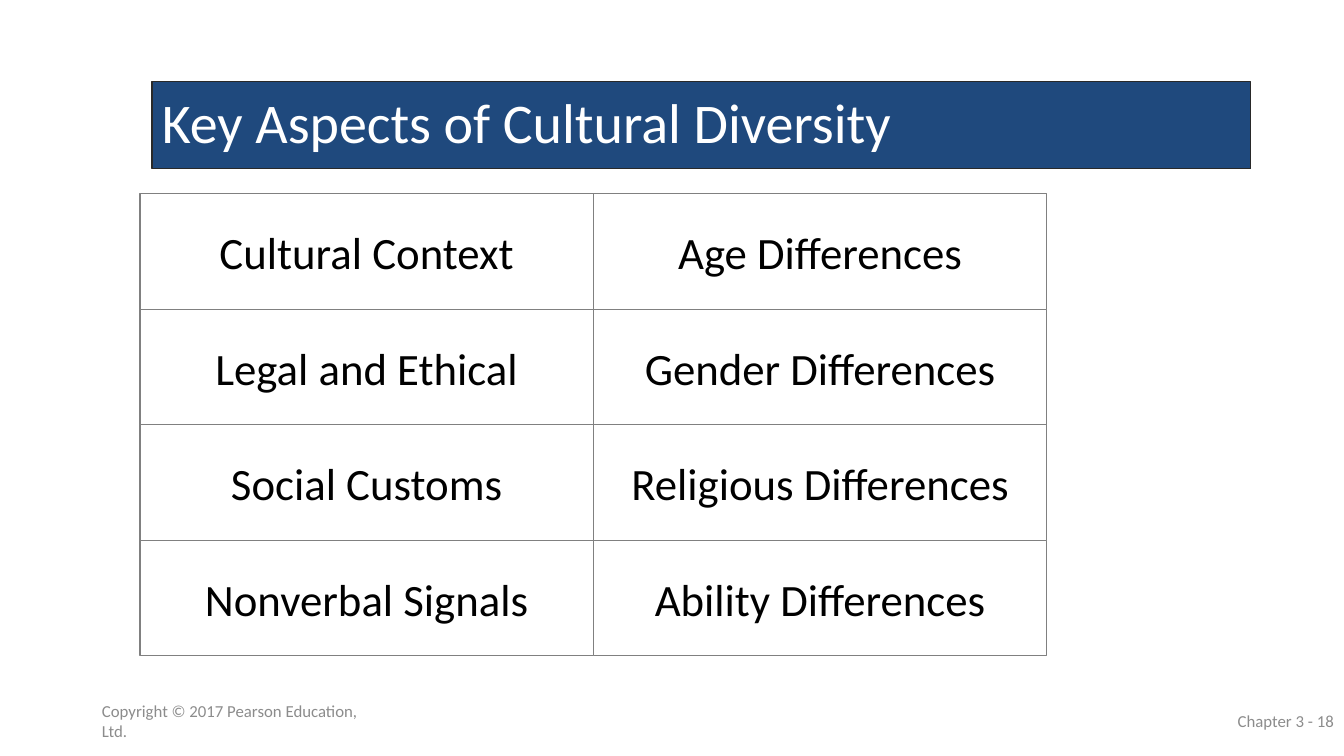
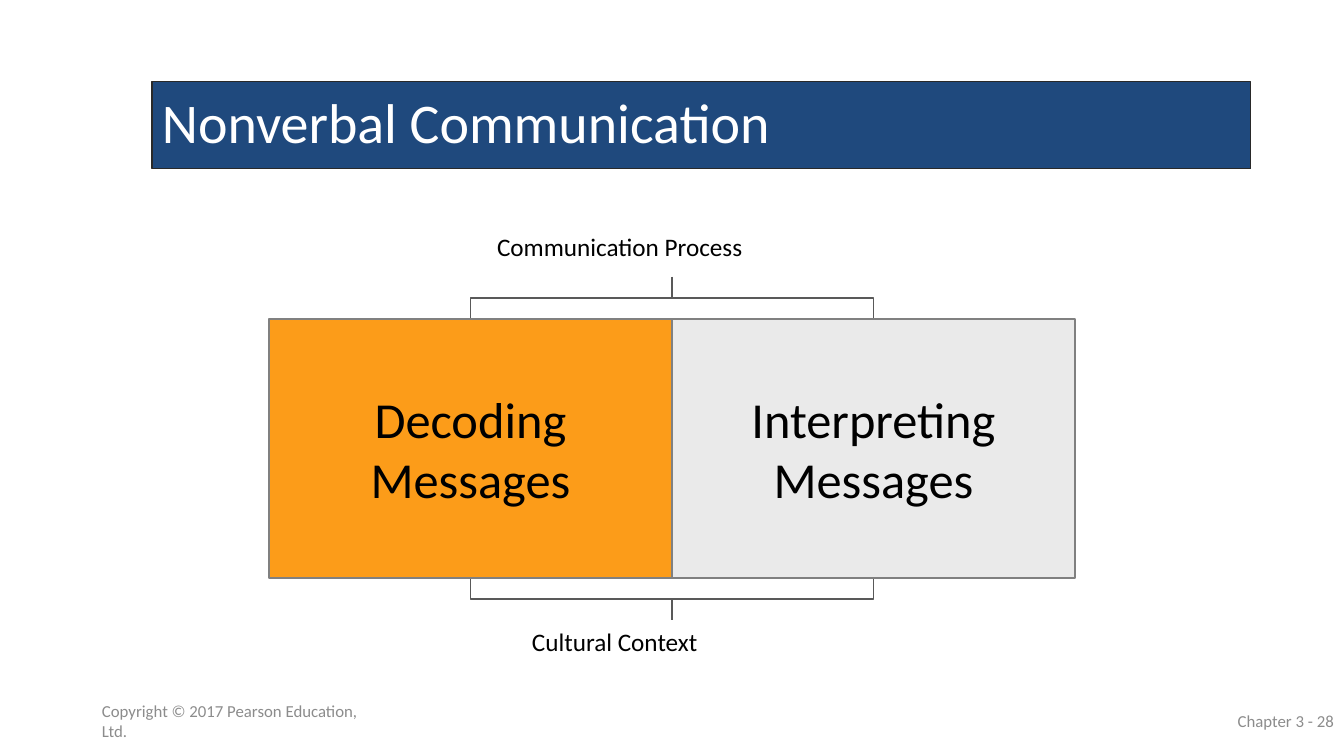
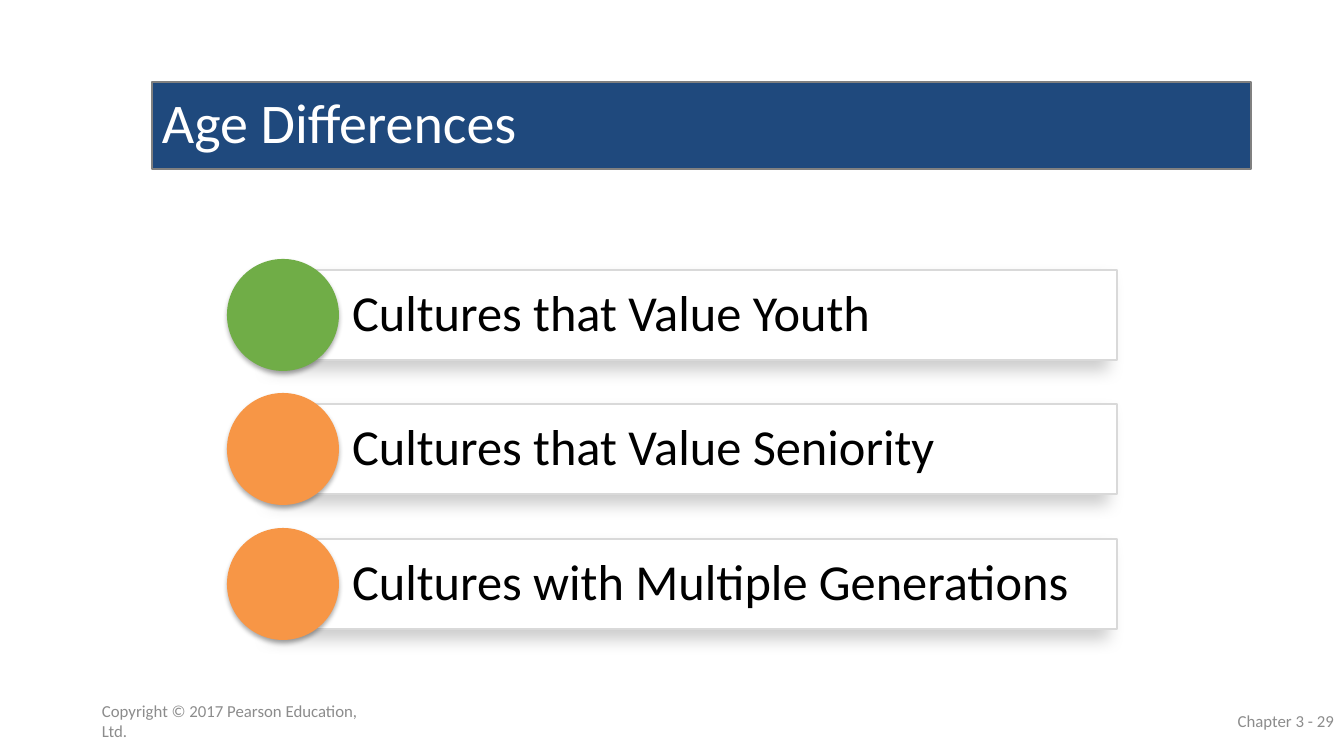
from lxml import etree
from pptx import Presentation
from pptx.dml.color import RGBColor
from pptx.enum.shapes import MSO_CONNECTOR, MSO_SHAPE
from pptx.enum.text import MSO_ANCHOR, PP_ALIGN
from pptx.oxml.ns import qn
from pptx.util import Emu, Pt

RECT, OVAL = MSO_SHAPE.RECTANGLE, MSO_SHAPE.OVAL
ELBOW = MSO_CONNECTOR.ELBOW
LEFT, CENTER, RIGHT = PP_ALIGN.LEFT, PP_ALIGN.CENTER, PP_ALIGN.RIGHT
TOP, MIDDLE = MSO_ANCHOR.TOP, MSO_ANCHOR.MIDDLE

SLIDE_W, SLIDE_H = 1344, 756
EMU_PER_PX = 12192000 / SLIDE_W
FONT = "Calibri"
NAVY, WHITE, BLACK, GRAY = "1F497D", "FFFFFF", "000000", "808080"
CHARCOAL, FOOTER_GRAY, WIRE, PALE = "292929", "8C8C8C", "595959", "D9D9D9"
AMBER, SILVER, GREEN, ORANGE = "FC9C19", "EAEAEA", "70AD47", "F79646"

TITLE = {"size": 40, "color": WHITE, "spacing": 0.9}
FOOTER = {"size": 12, "color": FOOTER_GRAY}
CELL = {"size": 32, "align": CENTER, "wrap": False}
LABEL = {"size": 18, "anchor": TOP}
PANEL = {"size": 36, "align": CENTER, "wrap": False}
BAR = {"size": 36, "spacing": 0.9, "margins": (72, 10, 10, 10)}
BAR_SHADOW = {"alpha": 20, "blur": 11.8, "dist": 10, "angle": 141}
DOT_SHADOW = {"alpha": 32, "blur": 3.5, "dist": 2.2, "angle": 90}


def px(n):
    """Turn pixels into EMU."""
    return Emu(round(n * EMU_PER_PX))


def rgb(code):
    """Turn a hex string into a colour."""
    return RGBColor.from_string(code)


def set_attrs(obj, values):
    """Set each attribute named in a dict."""
    for name, value in values.items():
        setattr(obj, name, value)


def write(tf, text, size, color=BLACK, align=LEFT, spacing=1.0, anchor=MIDDLE,
          wrap=True, margins=(10, 5, 10, 5)):
    """Fill a text frame with one paragraph per line of text."""
    sides = ("margin_left", "margin_top", "margin_right", "margin_bottom")
    set_attrs(tf, {"word_wrap": wrap, "vertical_anchor": anchor,
                   **{side: px(n) for side, n in zip(sides, margins)}})
    for i, line in enumerate(text.split("\n")):
        p = tf.paragraphs[0] if i == 0 else tf.add_paragraph()
        set_attrs(p, {"alignment": align, "line_spacing": spacing})
        r = p.add_run()
        r.text = line
        set_attrs(r.font, {"name": FONT, "size": Pt(size)})
        r.font.color.rgb = rgb(color)


def add_box(slide, kind, at, fill, line=None, width=1.0):
    """Add a flat preset shape."""
    sp = slide.shapes.add_shape(kind, *map(px, at))
    sp.shadow.inherit = False
    sp.fill.solid()
    sp.fill.fore_color.rgb = rgb(fill)
    if line:
        sp.line.color.rgb = rgb(line)
        sp.line.width = Pt(width)
    else:
        sp.line.fill.background()
    return sp


def add_shadow(sp, alpha, blur, dist, angle):
    """Give a shape a black outer shadow."""
    effects = sp._element.spPr.find(qn("a:effectLst"))
    shadow = etree.SubElement(
        effects, qn("a:outerShdw"), blurRad=str(Pt(blur)), dist=str(Pt(dist)),
        dir=str(angle * 60000), algn="ctr", rotWithShape="0")
    color = etree.SubElement(shadow, qn("a:srgbClr"), val=BLACK)
    etree.SubElement(color, qn("a:alpha"), val=str(alpha * 1000))


def add_text(slide, at, text, **style):
    """Add a text box."""
    write(slide.shapes.add_textbox(*map(px, at)).text_frame, text, **style)


def add_bracket_arm(slide, x1, y1, x2, y2):
    """Add an elbow connector that leaves and arrives vertically."""
    cx, cy = (x1 + x2) / 2, (y1 + y2) / 2
    turn = 1 if (x2 - x1) * (y2 - y1) < 0 else -1
    ends = [px(n) for x, y in ((x1, y1), (x2, y2))
            for n in (cx + turn * (y - cy), cy - turn * (x - cx))]
    c = slide.shapes.add_connector(ELBOW, *ends)
    c.line.color.rgb = rgb(WIRE)
    c.line.width = Pt(1)
    spPr = c._element.spPr
    spPr.find(qn("a:xfrm")).set("rot", str(turn * 90 % 360 * 60000))
    etree.SubElement(spPr, qn("a:effectLst"))


def add_grid(slide, at, columns):
    """Add columns of equal, touching boxes."""
    left, top, width, height = at
    w, h = width / len(columns), height / len(columns[0])
    for i, column in enumerate(columns):
        for j, text in enumerate(column):
            sp = add_box(slide, RECT, (left + i * w, top + j * h, w, h),
                         WHITE, GRAY, 0.75)
            write(sp.text_frame, text, **CELL)


def add_slide(prs, title, number, line=CHARCOAL, width=0.75):
    """Add a slide with its title band and footers."""
    slide = prs.slides.add_slide(prs.slide_layouts[6])
    band = add_box(slide, RECT, (152, 82, 1099, 87), NAVY, line, width)
    write(band.text_frame, title, **TITLE)
    add_text(slide, (92, 701, 302, 40),
             "Copyright © 2017 Pearson Education, Ltd.", **FOOTER)
    add_text(slide, (1042, 701, 302, 40), f"Chapter 3 - {number}",
             align=RIGHT, **FOOTER)
    return slide


def build_aspects(prs):
    """Build the grid of diversity aspects."""
    slide = add_slide(prs, "Key Aspects of Cultural Diversity", 18)
    add_grid(slide, (140, 194, 907, 462), (
        ("Cultural Context", "Legal and Ethical",
         "Social Customs", "Nonverbal Signals"),
        ("Age Differences", "Gender Differences",
         "Religious Differences", "Ability Differences")))


def build_nonverbal(prs):
    """Build the two panels with their brackets."""
    slide = add_slide(prs, "Nonverbal Communication", 28)
    add_text(slide, (522, 621, 299, 40), "Cultural Context", **LABEL)
    add_text(slide, (487, 226, 278, 40), "Communication Process",
             wrap=False, **LABEL)
    left, top, w, h, stem = 269, 319, 403, 259, 42
    mid, bottom = left + w, top + h
    for tip, edge in ((top - stem, top), (bottom + stem, bottom)):
        for x in (mid + w / 2, mid - w / 2):
            add_bracket_arm(slide, mid, tip, x, edge)
    panels = (("Decoding\nMessages", AMBER), ("Interpreting\nMessages", SILVER))
    for i, (text, fill) in enumerate(panels):
        sp = add_box(slide, RECT, (left + i * w, top, w, h), fill, GRAY)
        write(sp.text_frame, text, **PANEL)


def build_age(prs):
    """Build the list of bars with round markers."""
    slide = add_slide(prs, "Age Differences", 29, GRAY, 1)
    items = (("Cultures that Value Youth", GREEN),
             ("Cultures that Value Seniority", ORANGE),
             ("Cultures with Multiple Generations", ORANGE))
    for i, (text, fill) in enumerate(items):
        top = 270 + i * 269 // 2
        bar = add_box(slide, RECT, (280, top, 837, 90), WHITE, PALE)
        add_shadow(bar, **BAR_SHADOW)
        write(bar.text_frame, text, **BAR)
        dot = add_box(slide, OVAL, (227, top - 11, 112, 112), fill)
        add_shadow(dot, **DOT_SHADOW)


def main():
    """Build and save the presentation."""
    prs = Presentation()
    set_attrs(prs, {"slide_width": px(SLIDE_W), "slide_height": px(SLIDE_H)})
    for build in (build_aspects, build_nonverbal, build_age):
        build(prs)
    prs.save("out.pptx")


if __name__ == "__main__":
    main()
